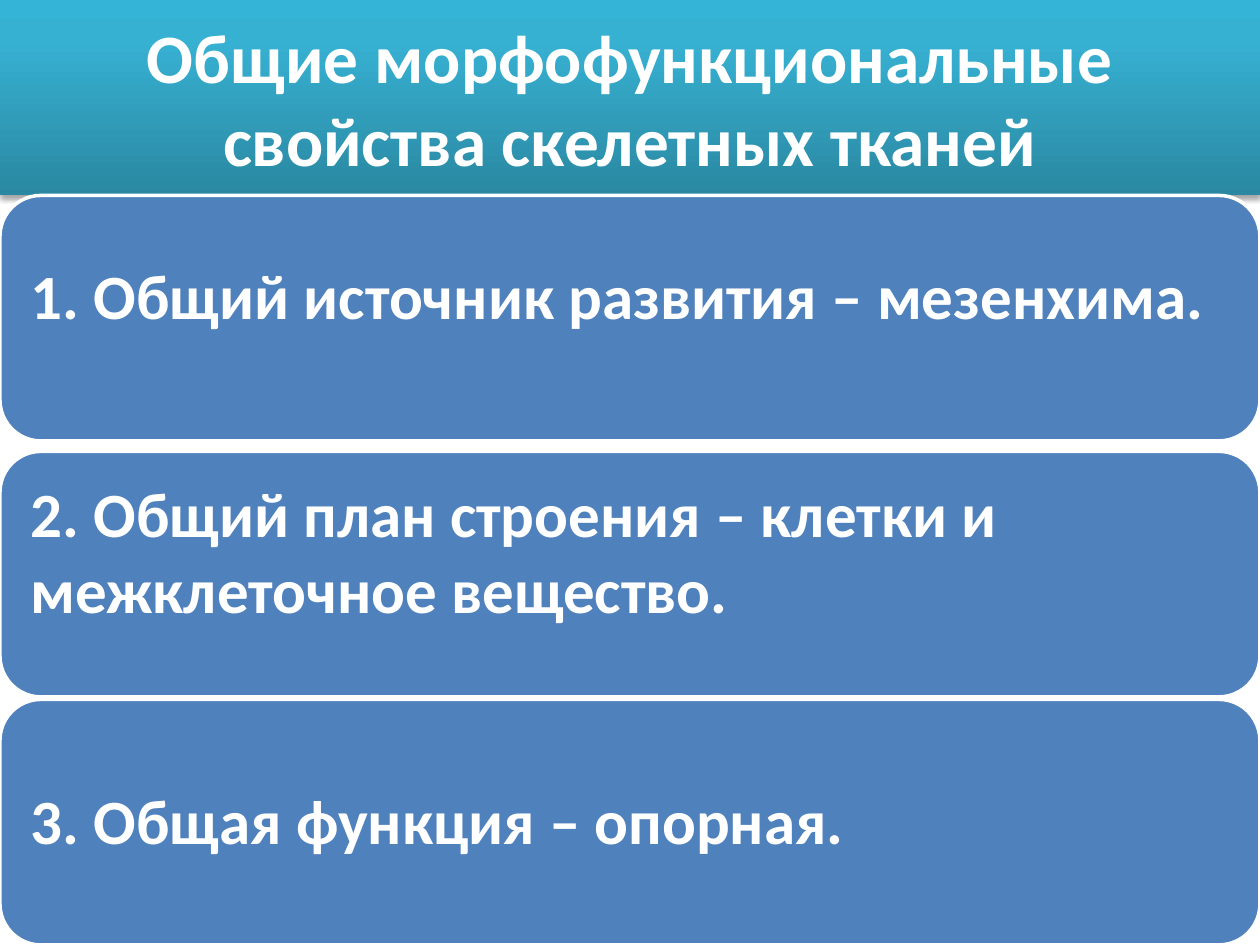
"""Build a slide listing the common properties of skeletal tissues."""
from copy import deepcopy

from lxml import etree
from pptx import Presentation, dml, util as u
from pptx.dml import color
from pptx.enum import shapes, text
from pptx.oxml import ns

TITLE = "Общие морфофункциональные свойства скелетных тканей"
PROPERTIES = [
    ("1. Общий источник развития – мезенхима.", 3.94, 0.95),
    ("2. Общий план строения – клетки и межклеточное вещество.", 9.1, 0.95),
    ("3. Общая функция – опорная.", 14.1, 0.1),
]
GRADIENT = [(0, "2A88A2"), (0.8, "37B1D2"), (1, "34B4D6")]
WIDTH, HEIGHT = 25.4, 19.05
TITLE_HEIGHT, BOX_HEIGHT = 3.94, 4.95
INSET = 0.38


def rgb(value):
    return color.RGBColor.from_string(value)


def add_panel(page, kind, top, height, words, size, align, lift=0):
    box = page.shapes.add_shape(kind, 0, u.Cm(top), u.Cm(WIDTH), u.Cm(height))
    box.shadow.inherit = False
    frame = box.text_frame
    frame.word_wrap = True
    frame.vertical_anchor = text.MSO_ANCHOR.MIDDLE
    frame.margin_left = frame.margin_right = frame.margin_top = u.Cm(INSET)
    frame.margin_bottom = u.Cm(INSET + lift)
    para = frame.paragraphs[0]
    para.text = words
    para.alignment = align
    para.font.name = "Calibri"
    para.font.size = u.Pt(size)
    para.font.bold = True
    para.font.color.rgb = rgb("FFFFFF")
    return box


def fill_gradient(box):
    box.fill.gradient()
    box.fill.gradient_angle = 90
    stop_list = box.element.spPr.find(".//" + ns.qn("a:gsLst"))
    stop_list.append(deepcopy(stop_list[-1]))
    for stop, (position, value) in zip(box.fill.gradient_stops, GRADIENT):
        stop.position = position
        stop.color.rgb = rgb(value)


def add_shadow(box):
    effects = box.element.spPr.find(ns.qn("a:effectLst"))
    shadow = etree.SubElement(
        effects, ns.qn("a:outerShdw"), blurRad=str(u.Pt(3.1)),
        dist=str(u.Pt(1.8)), dir="5400000", rotWithShape="0")
    tint = etree.SubElement(shadow, ns.qn("a:srgbClr"), val="000000")
    etree.SubElement(tint, ns.qn("a:alpha"), val="35000")


def main():
    deck = Presentation()
    deck.slide_width, deck.slide_height = u.Cm(WIDTH), u.Cm(HEIGHT)
    page = deck.slides.add_slide(deck.slide_layouts[6])

    title = add_panel(page, shapes.MSO_SHAPE.RECTANGLE, 0, TITLE_HEIGHT,
                      TITLE, 39.6, text.PP_ALIGN.CENTER)
    title.line.fill.background()
    fill_gradient(title)
    add_shadow(title)

    for words, top, lift in PROPERTIES:
        box = add_panel(page, shapes.MSO_SHAPE.ROUNDED_RECTANGLE, top,
                        BOX_HEIGHT, words, 36, text.PP_ALIGN.LEFT, lift)
        box.fill.solid()
        box.fill.fore_color.rgb = rgb("4F81BD")
        box.line.color.rgb = rgb("FFFFFF")
        box.line.width = u.Pt(2)

    deck.save("out.pptx")


if __name__ == "__main__":
    main()
